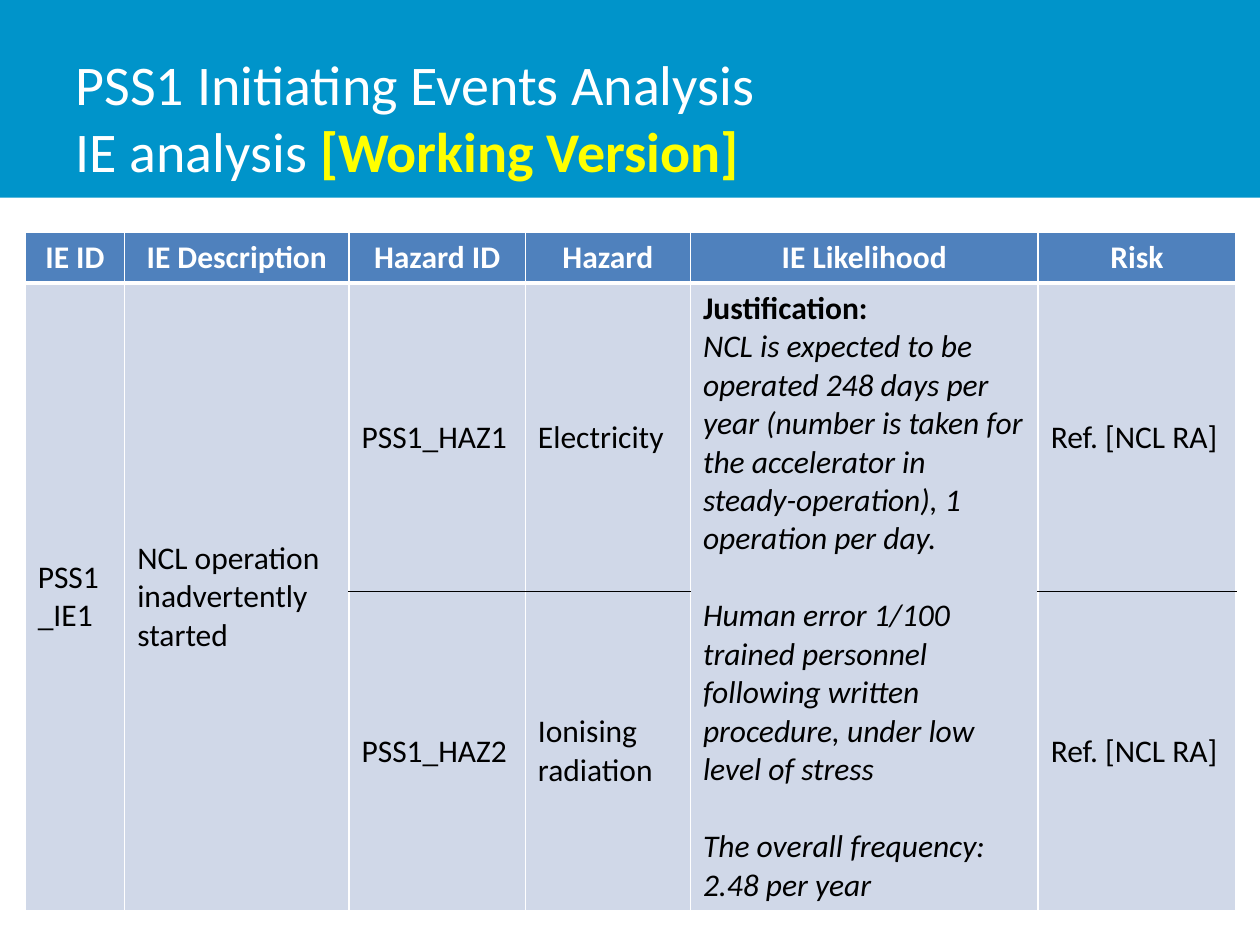
from lxml import etree
from pptx import Presentation
from pptx.dml.color import RGBColor
from pptx.enum.shapes import MSO_SHAPE
from pptx.enum.text import MSO_ANCHOR, PP_ALIGN
from pptx.oxml.ns import qn
from pptx.util import Inches, Pt

RECTANGLE = MSO_SHAPE.RECTANGLE
TOP, MIDDLE = MSO_ANCHOR.TOP, MSO_ANCHOR.MIDDLE
LEFT, CENTER = PP_ALIGN.LEFT, PP_ALIGN.CENTER

WHITE = RGBColor(0xFF, 0xFF, 0xFF)
BLACK = RGBColor(0x00, 0x00, 0x00)
YELLOW = RGBColor(0xFF, 0xFF, 0x00)
BAND_BLUE = RGBColor(0x00, 0x94, 0xCA)
HEADER_BLUE = RGBColor(0x4F, 0x81, 0xBD)
BODY_BLUE = RGBColor(0xD0, 0xD8, 0xE8)

FONT = "Calibri"
LINE_GAP = 22  # points, one line of 18 point text

TITLE_LINES = ["PSS1 Initiating Events Analysis", "IE analysis "]
TITLE_STATUS = "[Working Version]"

HEADERS = ["IE ID", "IE Description", "Hazard ID", "Hazard", "IE Likelihood", "Risk"]
COLUMN_WIDTHS = [0.79, 1.78, 1.4, 1.31, 2.76, 1.57]
ROW_HEIGHTS = [0.38, 2.45, 2.45]

EVENT = {0: "PSS1_IE1", 1: "NCL operation inadvertently started"}
HAZARDS = [
    {2: "PSS1_HAZ1", 3: "Electricity", 5: "Ref. [NCL RA]"},
    {2: "PSS1_HAZ2", 3: "Ionising radiation", 5: "Ref. [NCL RA]"},
]
LIKELIHOOD_COLUMN = 4
MERGED_COLUMNS = [*EVENT, LIKELIHOOD_COLUMN]
# text, format, space before in points
LIKELIHOOD = [
    ("Justification:", {"bold": True}, 0),
    ("NCL is expected to be operated 248 days per year (number is taken for "
     "the accelerator in steady-operation), 1 operation per day.", {"italic": True}, 0),
    ("Human error 1/100", {"italic": True}, LINE_GAP),
    ("trained personnel following written procedure, under low level of stress",
     {"italic": True}, 0),
    ("The overall frequency:", {"italic": True}, LINE_GAP),
    ("2.48 per year", {"italic": True}, 0),
]


def add_run(paragraph, text, color, size, **formats):
    run = paragraph.add_run()
    run.text = text
    run.font.color.rgb = color
    for name, value in {"name": FONT, "size": Pt(size), "bold": False, **formats}.items():
        setattr(run.font, name, value)


def set_borders(cell, row, column):
    """White grid, thick under the header, black between the two hazards."""
    top, bottom = (WHITE, 1), (WHITE, 1)
    if row == 0:
        bottom = (WHITE, 3)
    elif row == 1:
        top = (WHITE, 3)
    if column not in MERGED_COLUMNS:
        if row == 1:
            bottom = (BLACK, 1)
        elif row == 2:
            top = (BLACK, 1)
    edges = {"L": (WHITE, 1), "R": (WHITE, 1), "T": top, "B": bottom}
    properties = cell._tc.get_or_add_tcPr()
    for side, (color, width) in edges.items():
        line = etree.SubElement(properties, qn(f"a:ln{side}"), w=str(Pt(width)))
        fill = etree.SubElement(line, qn("a:solidFill"))
        etree.SubElement(fill, qn("a:srgbClr"), val=str(color))


def write_cell(cell, paragraphs, color=BLACK, anchor=MIDDLE, alignment=LEFT):
    cell.vertical_anchor = anchor
    frame = cell.text_frame
    for index, (text, formats, space) in enumerate(paragraphs):
        paragraph = frame.add_paragraph() if index else frame.paragraphs[0]
        paragraph.alignment = alignment
        if space:
            paragraph.space_before = Pt(space)
        add_run(paragraph, text, color, 18, **formats)


def add_title(slide):
    band = slide.shapes.add_shape(RECTANGLE, 0, 0, Inches(10), Inches(1.57))
    band.shadow.inherit = False
    band.fill.solid()
    band.fill.fore_color.rgb = BAND_BLUE
    band.line.fill.background()

    title = slide.shapes.title
    title.element.addprevious(band.element)
    title.left, title.top, title.width, title.height = map(Inches, (0.5, 0.3, 7.81, 1.25))
    title.text_frame.vertical_anchor = MIDDLE
    paragraph = title.text_frame.paragraphs[0]
    paragraph.alignment = LEFT
    first, second = TITLE_LINES
    add_run(paragraph, first, WHITE, 32)
    paragraph.add_line_break()
    add_run(paragraph, second, WHITE, 32)
    add_run(paragraph, TITLE_STATUS, YELLOW, 32, bold=True)


def add_events_table(slide):
    table = slide.shapes.add_table(
        len(ROW_HEIGHTS), len(COLUMN_WIDTHS), Inches(0.2), Inches(1.84),
        Inches(sum(COLUMN_WIDTHS)), Inches(sum(ROW_HEIGHTS))).table
    for column, width in zip(table.columns, COLUMN_WIDTHS):
        column.width = Inches(width)
    for row, height in zip(table.rows, ROW_HEIGHTS):
        row.height = Inches(height)

    for row in range(len(ROW_HEIGHTS)):
        for column in range(len(COLUMN_WIDTHS)):
            cell = table.cell(row, column)
            set_borders(cell, row, column)
            cell.fill.solid()
            cell.fill.fore_color.rgb = BODY_BLUE if row else HEADER_BLUE
    for column in MERGED_COLUMNS:
        table.cell(1, column).merge(table.cell(2, column))

    for column, text in enumerate(HEADERS):
        write_cell(table.cell(0, column), [(text, {"bold": True}, 0)], WHITE, TOP, CENTER)
    for row, texts in enumerate([{**EVENT, **HAZARDS[0]}, HAZARDS[1]], start=1):
        for column, text in texts.items():
            write_cell(table.cell(row, column), [(text, {}, 0)])
    write_cell(table.cell(1, LIKELIHOOD_COLUMN), LIKELIHOOD, anchor=TOP)


def main():
    presentation = Presentation()
    presentation.slide_width, presentation.slide_height = Inches(10), Inches(7.5)
    slide = presentation.slides.add_slide(presentation.slide_layouts.get_by_name("Title Only"))
    add_title(slide)
    add_events_table(slide)
    presentation.save("out.pptx")


if __name__ == "__main__":
    main()
